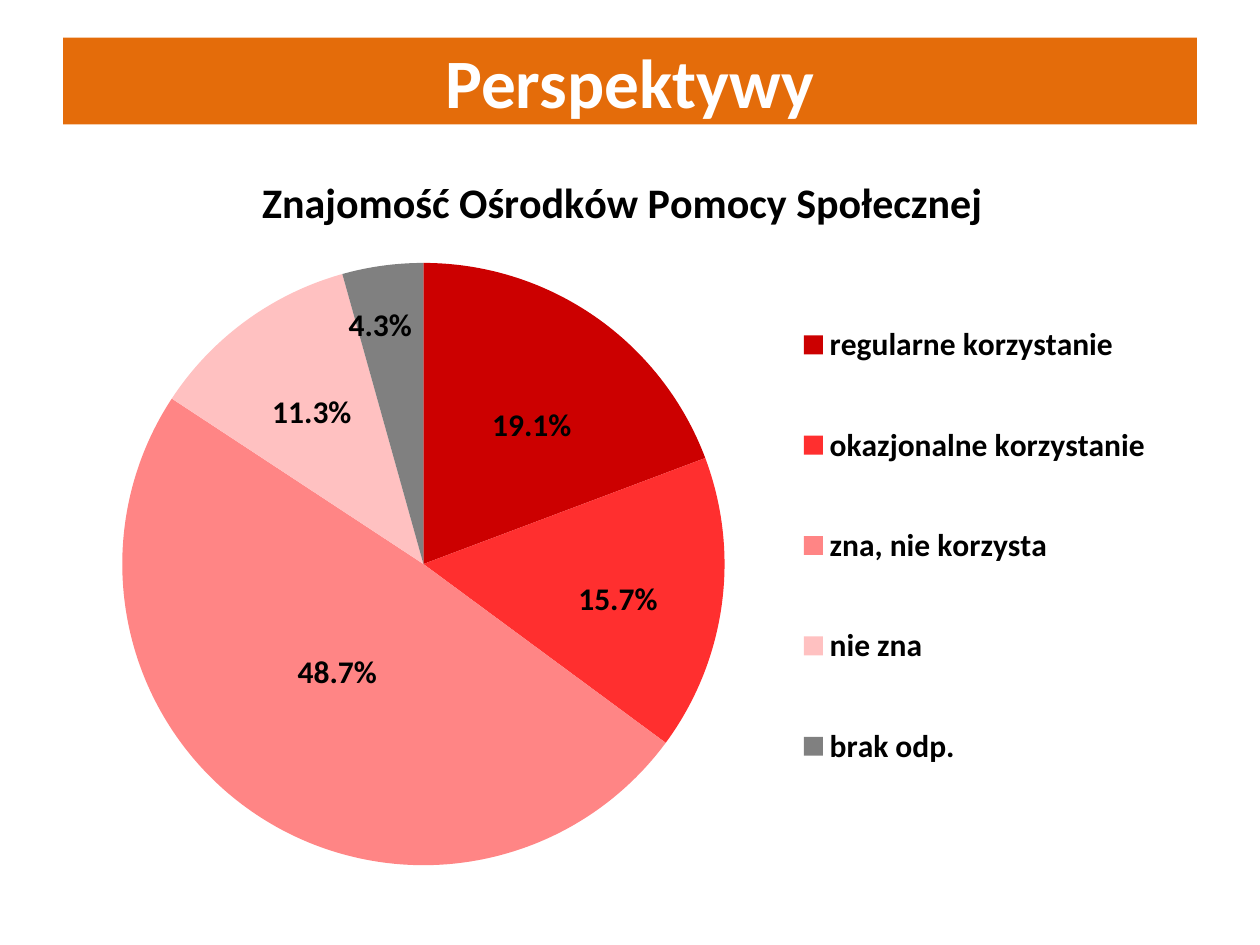
from lxml.etree import SubElement
from pptx import Presentation
from pptx.chart.data import CategoryChartData
from pptx.dml.color import RGBColor
from pptx.enum.chart import XL_CHART_TYPE, XL_LABEL_POSITION, XL_LEGEND_POSITION
from pptx.enum.text import MSO_ANCHOR, PP_ALIGN
from pptx.oxml.ns import qn
from pptx.util import Cm, Pt

COLORS = {"banner": "E46C0A", "white": "FFFFFF", "black": "000000"}
TITLE = "Perspektywy"
CHART_TITLE = "Znajomość Ośrodków Pomocy Społecznej"
FORMAT = "0.0%"
ANSWERS = [
    ("regularne korzystanie", 0.191, "CC0000", (0.02, -0.02)),
    ("okazjonalne korzystanie", 0.157, "FF2F2F", (0.04, 0.02)),
    ("zna, nie korzysta", 0.487, "FF8585", (0, -0.02)),
    ("nie zna", 0.113, "FFC1C1", (-0.02, -0.04)),
    ("brak odp.", 0.043, "808080", (-0.02, -0.12)),
]
PLOT_AREA = {"layoutTarget": "inner", "xMode": "edge", "yMode": "edge",
             "x": 0.06, "y": 0.15, "w": 0.53, "h": 0.83}
LEGEND_AREA = {"xMode": "edge", "yMode": "edge",
               "x": 0.64, "y": 0.16, "w": 0.34, "h": 0.76}


def style_font(font, size, color="black", bold=True):
    values = {"name": "Calibri", "size": Pt(size), "bold": bold}
    for name, value in values.items():
        setattr(font, name, value)
    font.color.rgb = RGBColor.from_string(COLORS[color])


def set_layout(parent, index, values):
    for old in parent.findall(qn("c:layout")):
        parent.remove(old)
    layout = SubElement(parent, qn("c:layout"))
    manual = SubElement(layout, qn("c:manualLayout"))
    for name, value in values.items():
        SubElement(manual, qn(f"c:{name}")).set("val", str(value))
    parent.insert(index, layout)


def add_title(s):
    title = s.shapes.title
    box = {"left": Cm(1.27), "top": Cm(0.76), "width": Cm(22.86), "height": Cm(1.75)}
    for name, value in box.items():
        setattr(title, name, value)
    title.fill.solid()
    title.fill.fore_color.rgb = RGBColor.from_string(COLORS["banner"])
    tf = title.text_frame
    tf.vertical_anchor = MSO_ANCHOR.MIDDLE
    p = tf.paragraphs[0]
    p.alignment = PP_ALIGN.CENTER
    r = p.add_run()
    r.text = TITLE
    style_font(r.font, 39.6, "white")


def add_pie(s):
    data = CategoryChartData(number_format=FORMAT)
    data.categories = [answer[0] for answer in ANSWERS]
    data.add_series("Series 1", [answer[1] for answer in ANSWERS])
    chart = s.shapes.add_chart(XL_CHART_TYPE.PIE, Cm(1.09), Cm(2.92),
                               Cm(22.91), Cm(14.96), data).chart
    style_font(chart.font, 10, bold=False)

    chart.has_title = True
    r = chart.chart_title.text_frame.paragraphs[0].add_run()
    r.text = CHART_TITLE
    style_font(r.font, 24)
    chart.chart_title.include_in_layout = False

    chart.has_legend = True
    legend = chart.legend
    legend.position = XL_LEGEND_POSITION.RIGHT
    legend.include_in_layout = False
    style_font(legend.font, 18)
    set_layout(legend._element, 1, LEGEND_AREA)

    plot = chart.plots[0]
    plot.vary_by_categories = True
    set_layout(plot._element.getparent(), 0, PLOT_AREA)
    series = plot.series[0]
    labels = series.data_labels
    values = {"show_value": True, "number_format": FORMAT,
              "number_format_is_linked": False, "position": XL_LABEL_POSITION.CENTER}
    for name, value in values.items():
        setattr(labels, name, value)
    style_font(labels.font, 18)

    for i, (_, _, color, _) in enumerate(ANSWERS):
        point = series.points[i]
        point.format.fill.solid()
        point.format.fill.fore_color.rgb = RGBColor.from_string(color)
        style_font(point.data_label.font, 18)
        point.data_label.position = XL_LABEL_POSITION.CENTER
    for label, (_, _, _, (x, y)) in zip(series._element.xpath(".//c:dLbl"), ANSWERS):
        set_layout(label, 1, {"x": x, "y": y})
        fmt = SubElement(label, qn("c:numFmt"), formatCode=FORMAT, sourceLinked="0")
        label.insert(2, fmt)


def main():
    """Build the slide with a banner title and a pie chart."""
    prs = Presentation()
    prs.slide_width, prs.slide_height = Cm(25.4), Cm(19.05)
    s = prs.slides.add_slide(prs.slide_layouts[5])
    add_title(s)
    add_pie(s)
    prs.save("out.pptx")


if __name__ == "__main__":
    main()
